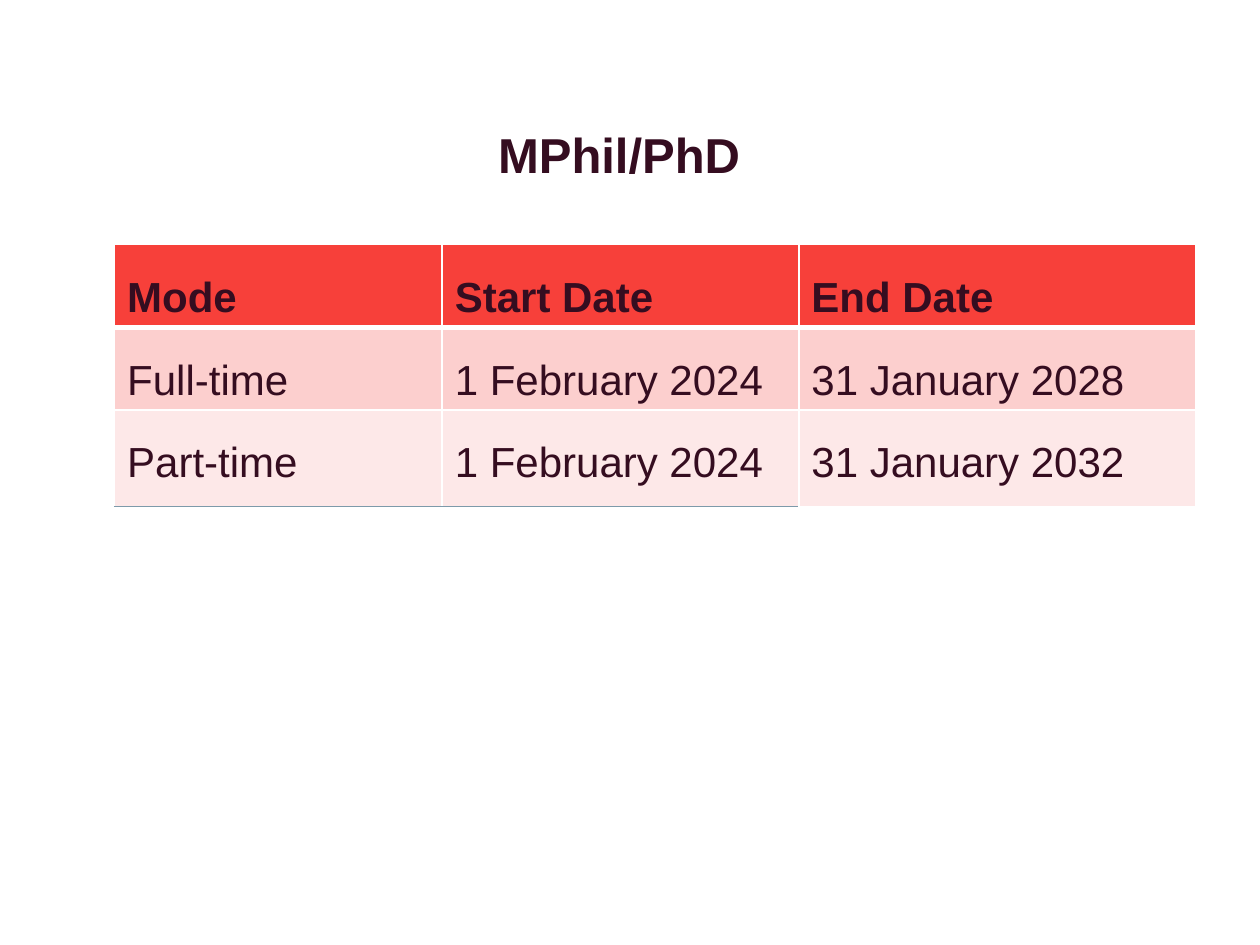
import pptx
import pptx.dml.color
import pptx.enum.text
import pptx.oxml
import pptx.oxml.ns
import pptx.util

Pt = pptx.util.Pt
FONT = "Arial"
COLOURS = {
    "text": "350D20",
    "header": "F7403A",
    "full_time": "FCCFCE",
    "part_time": "FDE8E8",
    "border": "FFFFFF",
    "bottom_rule": "7D9AAA",
}
COLUMN_WIDTHS = [187.2, 203.8, 226.8]
ROW_HEIGHTS = [45, 45, 55]
ROW_FILLS = ["header", "full_time", "part_time"]
DATES = [
    ["Mode", "Start Date", "End Date"],
    ["Full-time", "1 February 2024", "31 January 2028"],
    ["Part-time", "1 February 2024", "31 January 2032"],
]


def colour(name):
    return pptx.dml.color.RGBColor.from_string(COLOURS[name])


def add_span(para, text, size, bold):
    span = para.add_run()
    span.text = text
    span.font.name = FONT
    span.font.size = Pt(size)
    span.font.bold = bold
    span.font.color.rgb = colour("text")


def add_title(page, text):
    title = page.shapes.title
    title.left, title.top, title.width, title.height = Pt(70.5), Pt(54.7), Pt(566.6), Pt(116)
    frame = title.text_frame
    frame.margin_left = frame.margin_right = frame.margin_top = frame.margin_bottom = 0
    frame.vertical_anchor = pptx.enum.text.MSO_ANCHOR.TOP
    frame.word_wrap = True
    para = frame.paragraphs[0]
    para.alignment = pptx.enum.text.PP_ALIGN.CENTER
    para.line_spacing = Pt(50)
    para.space_before = Pt(0)
    add_span(para, text, 28, True)


def add_border(cell, side, name, width):
    """Draw one side of a cell: L, R, T or B, called in that order."""
    line = pptx.oxml.parse_xml(
        f'<a:ln{side} {pptx.oxml.ns.nsdecls("a")} w="{Pt(width)}">'
        f'<a:solidFill><a:srgbClr val="{COLOURS[name]}"/></a:solidFill></a:ln{side}>'
    )
    cell._tc.get_or_add_tcPr().append(line)


def format_cell(cell, row, column):
    has_rule = row == 2 and column < 2
    add_border(cell, "L", "border", 1)
    add_border(cell, "R", "border", 1)
    add_border(cell, "T", "border", 3 if row == 1 else 1)
    add_border(cell, "B", "bottom_rule" if has_rule else "border", 3 if row == 0 else 1)
    cell.fill.solid()
    cell.fill.fore_color.rgb = colour(ROW_FILLS[row])


def add_date_table(page):
    frame = page.shapes.add_table(
        len(DATES), len(COLUMN_WIDTHS), Pt(65.5), Pt(139.7),
        Pt(sum(COLUMN_WIDTHS)), Pt(sum(ROW_HEIGHTS)),
    )
    table = frame.table
    for column, width in zip(table.columns, COLUMN_WIDTHS):
        column.width = Pt(width)
    for row, height in zip(table.rows, ROW_HEIGHTS):
        row.height = Pt(height)
    for row, texts in enumerate(DATES):
        for column, text in enumerate(texts):
            cell = table.cell(row, column)
            format_cell(cell, row, column)
            para = cell.text_frame.paragraphs[0]
            para.line_spacing = 1.5
            add_span(para, text, 24, row == 0)


def main():
    deck = pptx.Presentation()
    deck.slide_width, deck.slide_height = Pt(720), Pt(540)
    page = deck.slides.add_slide(deck.slide_layouts.get_by_name("Title Only"))
    add_title(page, "MPhil/PhD")
    add_date_table(page)
    deck.save("out.pptx")


if __name__ == "__main__":
    main()
